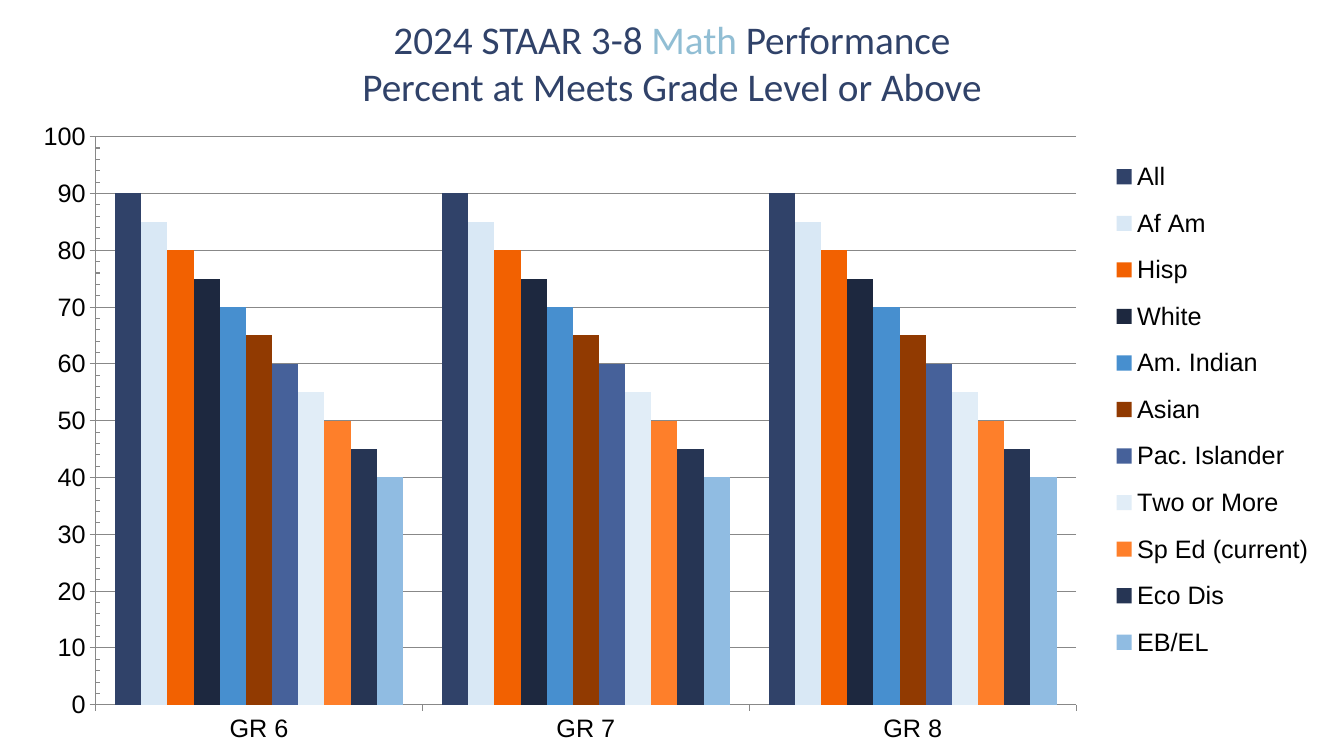
from dataclasses import dataclass

from lxml import etree
from pptx import Presentation
from pptx.chart.data import CategoryChartData
from pptx.dml.color import RGBColor as RGB
from pptx.enum.chart import XL_CHART_TYPE as CT, XL_LEGEND_POSITION as LP, XL_TICK_MARK as TM
from pptx.enum.text import MSO_ANCHOR as ANCHOR, PP_ALIGN as ALIGN
from pptx.oxml.ns import qn
from pptx.util import Inches, Pt


@dataclass(frozen=True)
class Theme:
    """Colours, fonts and type sizes of the slide."""
    navy: str = "304269"
    accent: str = "91BED4"
    ink: str = "000000"
    rule: str = "888888"
    title_font: str = "Calibri"
    chart_font: str = "Arial"
    title_size: int = 28
    chart_size: int = 18
    rule_width: float = 0.75


THEME = Theme()
SLIDE_W, SLIDE_H = Inches(13.33), Inches(7.5)
TITLE_BOX = (0.125, 0.016, 0.75, 0.133)
CHART_BOX = (0.013, 0.144, 0.969, 0.856)
PLOT_SHARE = (0.06, 0.043, 0.753, 0.878)
LEGEND_SHARE = (0.835, 0.055, 0.165, 0.82)

TITLE = [
    [("2024 STAAR 3-8 ", THEME.navy), ("Math ", THEME.accent), ("Performance", THEME.navy)],
    [("Percent at Meets Grade Level or Above", THEME.navy)],
]
GRADES = ["GR 6", "GR 7", "GR 8"]
GROUPS = [
    ("All", "304269"),
    ("Af Am", "D9E8F5"),
    ("Hisp", "F26101"),
    ("White", "1D283F"),
    ("Am. Indian", "478FCF"),
    ("Asian", "913A01"),
    ("Pac. Islander", "46619A"),
    ("Two or More", "E1EDF7"),
    ("Sp Ed (current)", "FE7F2A"),
    ("Eco Dis", "263554"),
    ("EB/EL", "90BCE2"),
]
TOP_SCORE, SCORE_STEP = 90, 5


def place(box):
    """Turn shares of the slide into left, top, width and height."""
    x, y, w, h = box
    return int(x * SLIDE_W), int(y * SLIDE_H), int(w * SLIDE_W), int(h * SLIDE_H)


def style_font(font, name, size, color):
    """Set the face, size and colour of a font."""
    font.name, font.size = name, Pt(size)
    font.color.rgb = RGB.from_string(color)


def style_line(line):
    """Give an axis or gridline the thin grey rule."""
    line.color.rgb = RGB.from_string(THEME.rule)
    line.width = Pt(THEME.rule_width)


def set_layout(parent, index, shares, inner=False):
    """Fix a chart part at shares of the chart area."""
    for old in parent.findall(qn("c:layout")):
        parent.remove(old)
    layout = etree.Element(qn("c:layout"))
    manual = etree.SubElement(layout, qn("c:manualLayout"))
    settings = [("layoutTarget", "inner")] if inner else []
    settings += [("xMode", "edge"), ("yMode", "edge"), *zip("xywh", shares)]
    for tag, value in settings:
        etree.SubElement(manual, qn(f"c:{tag}")).set("val", str(value))
    parent.insert(index, layout)


def add_title(slide, box):
    """Add the centred two-line title."""
    tf = slide.shapes.add_textbox(*place(box)).text_frame
    tf.word_wrap = True
    tf.vertical_anchor = ANCHOR.MIDDLE
    for i, runs in enumerate(TITLE):
        p = tf.add_paragraph() if i else tf.paragraphs[0]
        p.alignment = ALIGN.CENTER
        for text, color in runs:
            r = p.add_run()
            r.text = text
            style_font(r.font, THEME.title_font, THEME.title_size, color)


def style_axes(chart):
    """Set the scale, ticks and rules of both axes."""
    grades, scores = chart.category_axis, chart.value_axis
    for axis in (grades, scores):
        axis.major_tick_mark = TM.OUTSIDE
        style_line(axis.format.line)
        style_font(axis.tick_labels.font, THEME.chart_font, THEME.chart_size, THEME.ink)
    grades.minor_tick_mark = TM.NONE
    scores.minor_tick_mark = TM.INSIDE
    scores.minimum_scale, scores.maximum_scale = 0, 100
    scores.major_unit, scores.minor_unit = 10, 2
    style_line(scores.major_gridlines.format.line)


def add_legend(chart):
    """Add the legend at the right of the plot."""
    chart.has_legend = True
    legend = chart.legend
    legend.position = LP.RIGHT
    legend.include_in_layout = False
    style_font(legend.font, THEME.chart_font, THEME.chart_size, THEME.ink)
    part = chart.element.find(f".//{qn('c:legend')}")
    set_layout(part, 1, LEGEND_SHARE)


def add_scores(slide, box):
    """Add the clustered columns of scores by grade and group."""
    data = CategoryChartData()
    data.categories = GRADES
    for i, (name, _) in enumerate(GROUPS):
        data.add_series(name, [TOP_SCORE - i * SCORE_STEP] * len(GRADES))
    chart = slide.shapes.add_chart(CT.COLUMN_CLUSTERED, *place(box), data).chart
    chart.has_title = False
    style_font(chart.font, THEME.chart_font, THEME.chart_size, THEME.ink)
    plot = chart.plots[0]
    plot.gap_width, plot.overlap, plot.vary_by_categories = 150, 0, False
    for series, (_, color) in zip(plot.series, GROUPS):
        series.format.fill.solid()
        series.format.fill.fore_color.rgb = RGB.from_string(color)
    style_axes(chart)
    add_legend(chart)
    set_layout(chart.element.find(f".//{qn('c:plotArea')}"), 0, PLOT_SHARE, inner=True)


def main():
    """Build and save the slide."""
    prs = Presentation()
    prs.slide_width, prs.slide_height = SLIDE_W, SLIDE_H
    slide = prs.slides.add_slide(prs.slide_layouts[6])
    add_scores(slide, CHART_BOX)
    add_title(slide, TITLE_BOX)
    prs.save("out.pptx")


if __name__ == "__main__":
    main()
